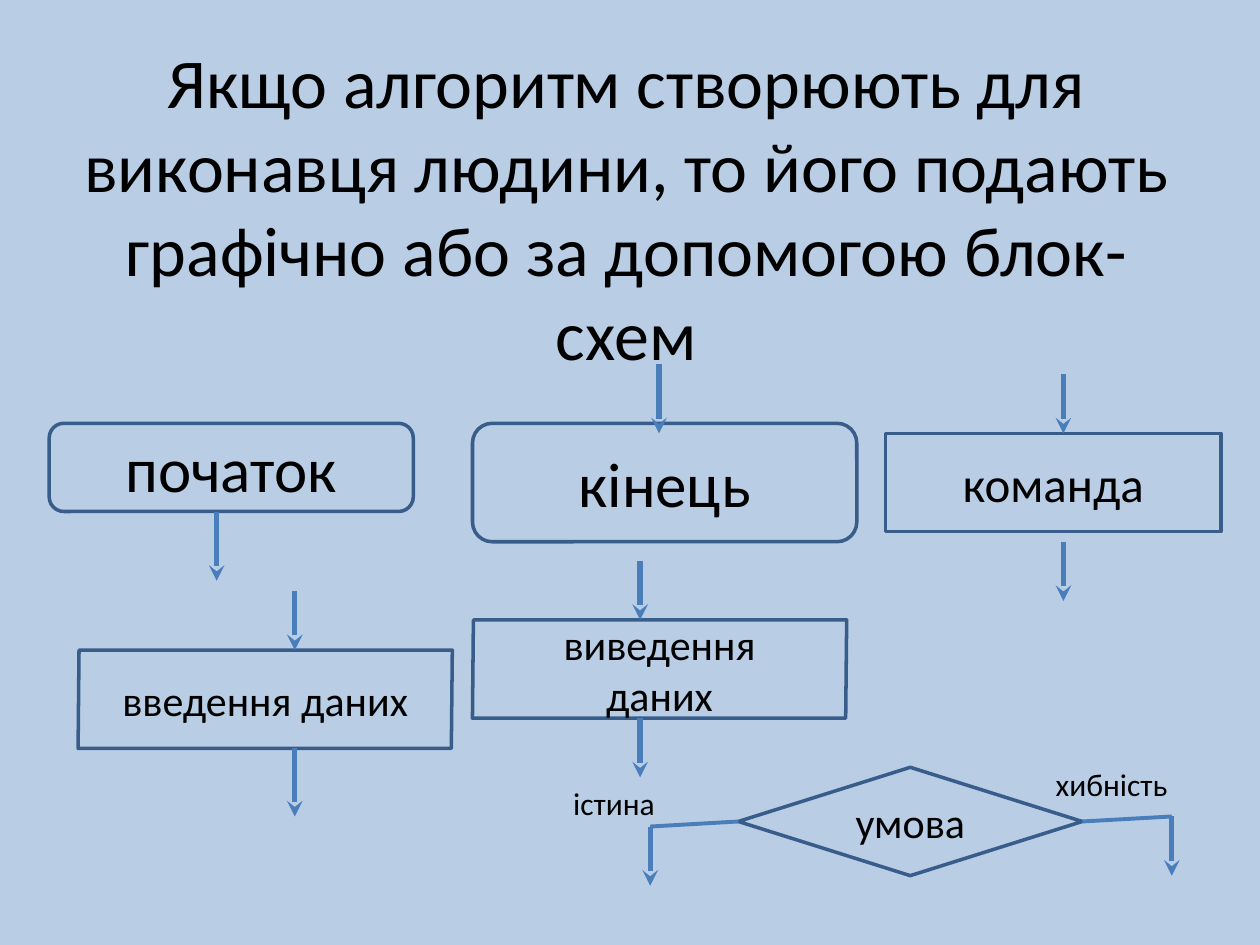
"""Build a slide that shows the basic flowchart blocks of an algorithm."""
from dataclasses import dataclass

import pptx
import pptx.dml.color
import pptx.enum.shapes
import pptx.enum.text
import pptx.oxml.ns
import pptx.util
from lxml import etree

Inches = pptx.util.Inches
Pt = pptx.util.Pt
MSO_SHAPE = pptx.enum.shapes.MSO_SHAPE
PP_ALIGN = pptx.enum.text.PP_ALIGN
MSO_ANCHOR = pptx.enum.text.MSO_ANCHOR
qn = pptx.oxml.ns.qn


@dataclass(frozen=True)
class Theme:
    font: str = "Calibri"
    background: str = "B9CDE5"
    text: str = "000000"
    outline: str = "385D8A"
    arrow: str = "4A7EBB"
    title: int = 40
    terminal: int = 36
    command: int = 28
    block: int = 24
    label: int = 18
    outline_width: float = 2
    arrow_width: float = 3
    branch_width: float = 2.25


THEME = Theme()


def rgb(value):
    return pptx.dml.color.RGBColor.from_string(value)


def write(sp, text, size, align, anchor):
    tf = sp.text_frame
    tf.word_wrap = True
    tf.vertical_anchor = anchor
    p = tf.paragraphs[0]
    p.alignment = align
    r = p.add_run()
    r.text = text
    r.font.name = THEME.font
    r.font.size = Pt(size)
    r.font.color.rgb = rgb(THEME.text)


def add_text(s, box, text, size, align=PP_ALIGN.LEFT, anchor=MSO_ANCHOR.TOP):
    sp = s.shapes.add_textbox(*map(Inches, box))
    write(sp, text, size, align, anchor)


def add_block(s, kind, box, text, size, adjustment=None):
    sp = s.shapes.add_shape(kind, *map(Inches, box))
    sp.shadow.inherit = False
    sp.fill.background()
    sp.line.color.rgb = rgb(THEME.outline)
    sp.line.width = Pt(THEME.outline_width)
    if adjustment is not None:
        sp.adjustments[0] = adjustment
    write(sp, text, size, PP_ALIGN.CENTER, MSO_ANCHOR.MIDDLE)
    return sp


def add_line(s, start, end, width):
    ends = map(Inches, (*start, *end))
    cx = s.shapes.add_connector(pptx.enum.shapes.MSO_CONNECTOR.STRAIGHT, *ends)
    cx.line.color.rgb = rgb(THEME.arrow)
    cx.line.width = Pt(width)
    etree.SubElement(cx._element.spPr, qn("a:effectLst"))
    return cx


def add_down_arrow(s, x, top, length):
    cx = add_line(s, (x, top), (x, top + length), THEME.arrow_width)
    etree.SubElement(cx.line._get_or_add_ln(), qn("a:tailEnd"), type="stealth")


def main():
    prs = pptx.Presentation()
    prs.slide_width, prs.slide_height = Inches(10), Inches(7.5)
    s = prs.slides.add_slide(prs.slide_layouts[6])
    s.background.fill.solid()
    s.background.fill.fore_color.rgb = rgb(THEME.background)

    add_text(s, (0.47, 0.39, 9, 2.5),
             "Якщо алгоритм створюють для виконавця людини, "
             "то його подають графічно або за допомогою блок-схем",
             THEME.title, PP_ALIGN.CENTER, MSO_ANCHOR.MIDDLE)

    for kind, box, text, size, adjustment in (
        (MSO_SHAPE.ROUNDED_RECTANGLE, (0.39, 3.36, 2.89, 0.7), "початок", THEME.terminal, None),
        (MSO_SHAPE.ROUNDED_RECTANGLE, (3.75, 3.36, 3.05, 0.94), "кінець", THEME.terminal, None),
        (MSO_SHAPE.RECTANGLE, (7.03, 3.44, 2.66, 0.78), "команда", THEME.command, None),
        (MSO_SHAPE.PARALLELOGRAM, (0.62, 5.16, 2.97, 0.78), "введення даних", THEME.block, 0.01),
        (MSO_SHAPE.PARALLELOGRAM, (3.75, 4.92, 2.97, 0.78), "виведення даних", THEME.block, 0.01),
    ):
        add_block(s, kind, box, text, size, adjustment)
    decision = add_block(s, MSO_SHAPE.FLOWCHART_DECISION, (5.86, 6.09, 2.73, 0.86),
                         "умова", THEME.block)

    true_branch = add_line(s, (5.86, 6.52), (5.16, 6.56), THEME.branch_width)
    true_branch.begin_connect(decision, 1)
    false_branch = add_line(s, (9.3, 6.48), (8.59, 6.52), THEME.branch_width)
    false_branch.end_connect(decision, 3)

    for x, top, length in (
        (1.72, 4.06, 0.55), (5.23, 2.89, 0.55), (2.34, 5.94, 0.54),
        (8.44, 2.97, 0.47), (8.44, 4.3, 0.47), (2.34, 4.69, 0.47),
        (5.08, 4.45, 0.47), (5.08, 5.7, 0.47), (5.16, 6.56, 0.47),
        (9.3, 6.48, 0.47),
    ):
        add_down_arrow(s, x, top, length)

    add_text(s, (4.45, 6.17, 1.72, 0.4), "істина", THEME.label)
    add_text(s, (8.28, 6.02, 1.72, 0.4), "хибність", THEME.label)
    prs.save("out.pptx")


if __name__ == "__main__":
    main()
